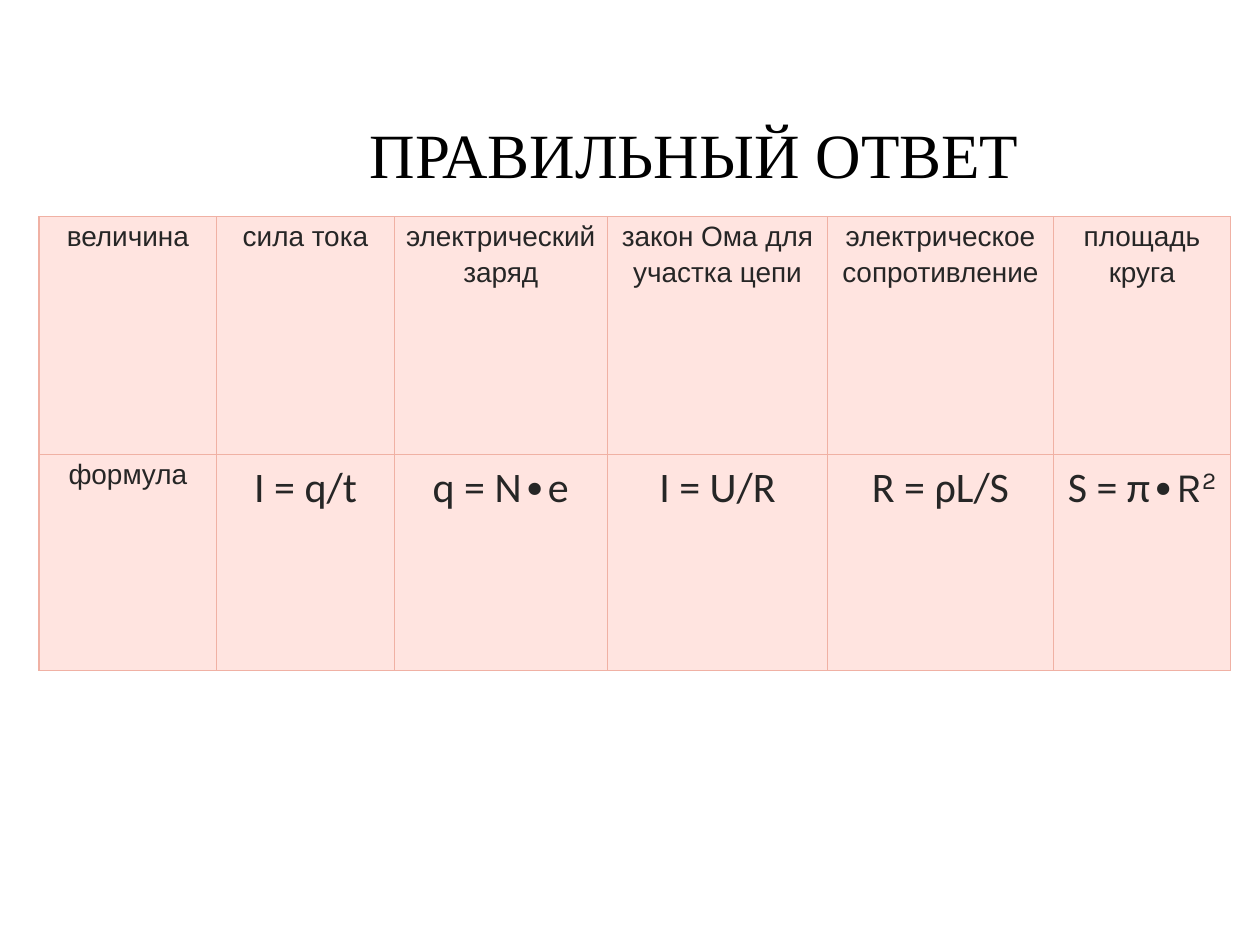
import pptx
import pptx.util
import pptx.dml.color
import pptx.enum.text
import lxml.etree
from pptx.util import Inches

DARK = pptx.dml.color.RGBColor(0x26, 0x26, 0x26)
BLACK = pptx.dml.color.RGBColor(0, 0, 0)
PINK = pptx.dml.color.RGBColor(0xFF, 0xE4, 0xE0)
EDGE = pptx.dml.color.RGBColor(0xF0, 0xB1, 0xA4)
CENTER = pptx.enum.text.PP_ALIGN.CENTER
MIDDLE = pptx.enum.text.MSO_ANCHOR.MIDDLE


def add_run(para, text, size, face, color):
    run = para.add_run()
    run.text = text
    run.font.size = pptx.util.Pt(size)
    run.font.name = face
    run.font.color.rgb = color
    return run


def add_edges(cell):
    props = cell._tc.get_or_add_tcPr()
    for place, side in enumerate(("lnL", "lnR", "lnT", "lnB")):
        line = lxml.etree.Element(pptx.oxml.ns.qn("a:" + side), w=str(pptx.util.Pt(0.75)))
        fill = lxml.etree.SubElement(line, pptx.oxml.ns.qn("a:solidFill"))
        lxml.etree.SubElement(fill, pptx.oxml.ns.qn("a:srgbClr"), val=str(EDGE))
        props.insert(place, line)


deck = pptx.Presentation()
deck.slide_width = Inches(10)
deck.slide_height = Inches(7.5)
slide = deck.slides.add_slide(deck.slide_layouts[5])

title = slide.shapes.title
title.left, title.top = Inches(2.81), Inches(0.88)
title.width, title.height = Inches(5.4), Inches(0.68)
frame = title.text_frame
frame.word_wrap = False
frame.auto_size = pptx.enum.text.MSO_AUTO_SIZE.NONE
frame.vertical_anchor = MIDDLE
frame.paragraphs[0].alignment = CENTER
add_run(frame.paragraphs[0], "ПРАВИЛЬНЫЙ ОТВЕТ", 36, "Times New Roman", BLACK)

names = ["величина", "сила тока", "электрический заряд", "закон Ома для участка цепи",
         "электрическое сопротивление", "площадь круга"]
rules = ["I = q/t", "q = N∙e", "I = U/R", "R = ρL/S", "S = π∙"]
widths = [1.41, 1.41, 1.69, 1.75, 1.79, 1.41]
heights = [1.89, 1.71]
rows = [[(name, 16, "Arial") for name in names],
        [("формула", 16, "Arial")] + [(rule, 24, "Calibri") for rule in rules]]

table = slide.shapes.add_table(2, 6, Inches(0.31), Inches(1.72),
                               Inches(sum(widths)), Inches(sum(heights))).table
table.first_row = False
table.horz_banding = False
for col, width in zip(table.columns, widths):
    col.width = Inches(width)
for row, height, items in zip(table.rows, heights, rows):
    row.height = Inches(height)
    for cell, (text, size, face) in zip(row.cells, items):
        cell.margin_left = cell.margin_right = Inches(0.07)
        cell.margin_top = cell.margin_bottom = 0
        cell.fill.solid()
        cell.fill.fore_color.rgb = PINK
        add_edges(cell)
        para = cell.text_frame.paragraphs[0]
        para.alignment = CENTER
        para.line_spacing = 1.15
        add_run(para, text, size, face, DARK)

area = table.cell(1, 5).text_frame.paragraphs[0]
add_run(area, "R", 24, "Karla", DARK)
power = add_run(area, "2", 24, "Karla", DARK)
power._r.get_or_add_rPr().set("baseline", "30000")

deck.save("out.pptx")
